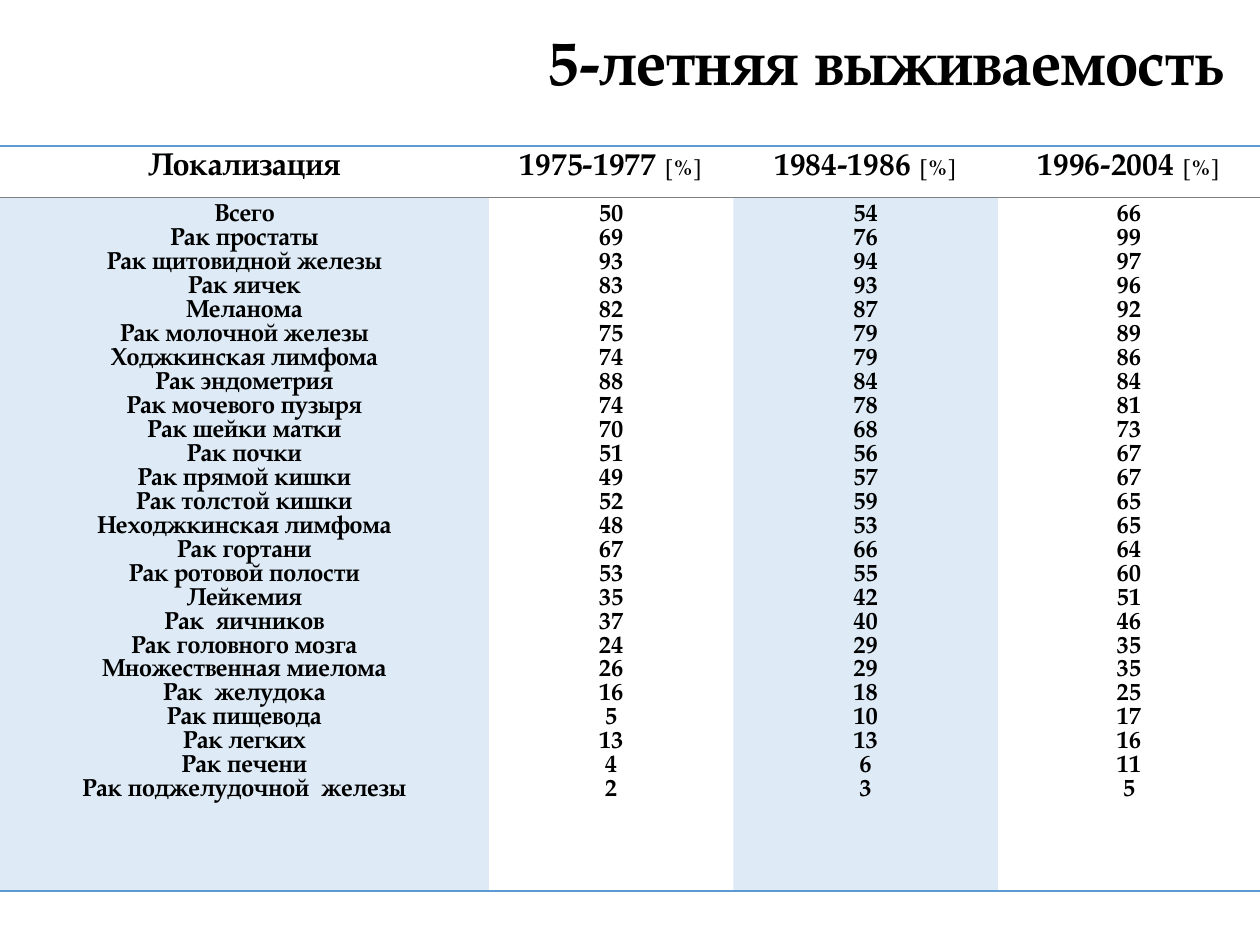
from typing import NamedTuple

import pptx
import pptx.util
import pptx.dml.color
import pptx.enum.text
import pptx.oxml.ns
from lxml import etree

FONT = "TeX Gyre Pagella"
BLUE = "5B9BD5"
GRAY = "7F7F7F"
WHITE = "FFFFFF"
Inches = pptx.util.Inches
Pt = pptx.util.Pt
qn = pptx.oxml.ns.qn
ALIGN = pptx.enum.text.PP_ALIGN
ANCHOR = pptx.enum.text.MSO_ANCHOR


class Column(NamedTuple):
    width: float
    header: str
    unit: str
    tinted: bool


class Survival(NamedTuple):
    site: str
    first: int
    second: int
    third: int


COLUMNS = [
    Column(3.88, "Локализация", "", True),
    Column(1.94, "1975-1977 ", "[%]", False),
    Column(2.1, "1984-1986 ", "[%]", True),
    Column(2.08, "1996-2004 ", "[%]", False),
]

ROWS = [
    Survival("Всего", 50, 54, 66),
    Survival("Рак простаты", 69, 76, 99),
    Survival("Рак щитовидной железы", 93, 94, 97),
    Survival("Рак яичек", 83, 93, 96),
    Survival("Меланома", 82, 87, 92),
    Survival("Рак молочной железы", 75, 79, 89),
    Survival("Ходжкинская лимфома", 74, 79, 86),
    Survival("Рак эндометрия", 88, 84, 84),
    Survival("Рак мочевого пузыря", 74, 78, 81),
    Survival("Рак шейки матки", 70, 68, 73),
    Survival("Рак почки", 51, 56, 67),
    Survival("Рак прямой кишки", 49, 57, 67),
    Survival("Рак толстой кишки", 52, 59, 65),
    Survival("Неходжкинская лимфома", 48, 53, 65),
    Survival("Рак гортани", 67, 66, 64),
    Survival("Рак ротовой полости", 53, 55, 60),
    Survival("Лейкемия", 35, 42, 51),
    Survival("Рак  яичников", 37, 40, 46),
    Survival("Рак головного мозга", 24, 29, 35),
    Survival("Множественная миелома", 26, 29, 35),
    Survival("Рак  желудока", 16, 18, 25),
    Survival("Рак пищевода", 5, 10, 17),
    Survival("Рак легких", 13, 13, 16),
    Survival("Рак печени", 4, 6, 11),
    Survival("Рак поджелудочной  железы", 2, 3, 5),
]


def color(value: str) -> pptx.dml.color.RGBColor:
    return pptx.dml.color.RGBColor.from_string(value)


def add_run(p, text: str, size: float) -> None:
    r = p.add_run()
    r.text = text
    r.font.name = FONT
    r.font.size = Pt(size)
    r.font.bold = True
    r.font.color.rgb = color("000000")


def set_border(cell, side: str, value: str, width: float) -> None:
    ln = etree.Element(qn(f"a:{side}"), w=str(Pt(width)))
    fill = etree.SubElement(ln, qn("a:solidFill"))
    etree.SubElement(fill, qn("a:srgbClr"), val=value)
    tc_pr = cell._tc.get_or_add_tcPr()
    position = len(tc_pr.findall(qn("a:lnT")))
    tc_pr.insert(position, ln)


def set_tint(cell) -> None:
    cell.fill.solid()
    cell.fill.fore_color.rgb = color(BLUE)
    clr = cell._tc.tcPr.find(qn("a:solidFill")).find(qn("a:srgbClr"))
    etree.SubElement(clr, qn("a:alpha"), val="20000")


def fill_header(cell, column: Column) -> None:
    p = cell.text_frame.paragraphs[0]
    p.alignment = ALIGN.CENTER
    add_run(p, column.header, 18)
    if column.unit:
        add_run(p, column.unit, 12)
    cell.fill.solid()
    cell.fill.fore_color.rgb = color(WHITE)
    set_border(cell, "lnT", BLUE, 1)
    set_border(cell, "lnB", GRAY, 0.5)


def fill_body(cell, values: list, tinted: bool) -> None:
    tf = cell.text_frame
    for i, value in enumerate(values):
        p = tf.add_paragraph() if i else tf.paragraphs[0]
        p.alignment = ALIGN.CENTER
        add_run(p, str(value), 14)
    if tinted:
        set_tint(cell)
    else:
        cell.fill.background()
    set_border(cell, "lnB", BLUE, 1)


def add_title(s) -> None:
    sp = s.shapes.title
    sp.left, sp.top = Inches(0.5), Inches(0.13)
    sp.width, sp.height = Inches(9.43), Inches(0.78)
    tf = sp.text_frame
    tf.word_wrap = True
    tf.vertical_anchor = ANCHOR.MIDDLE
    p = tf.paragraphs[0]
    p.alignment = ALIGN.RIGHT
    p.line_spacing = 0.9
    add_run(p, "5-летняя выживаемость ", 36)


def add_survival_table(s) -> None:
    frame = s.shapes.add_table(
        2, len(COLUMNS), 0, Inches(1.16), Inches(10), Inches(5.91)
    )
    table = frame.table
    table.horz_banding = False
    table.first_row = False
    style = table._tbl.tblPr.find(qn("a:tableStyleId"))
    style.text = "{2D5ABB26-0587-4C30-8999-92F81FD0307C}"
    table.rows[0].height = Inches(0.41)
    table.rows[1].height = Inches(5.5)
    for i, (column, values) in enumerate(zip(COLUMNS, zip(*ROWS))):
        table.columns[i].width = Inches(column.width)
        fill_header(table.cell(0, i), column)
        fill_body(table.cell(1, i), values, column.tinted)


def main() -> None:
    prs = pptx.Presentation()
    prs.slide_width, prs.slide_height = Inches(10), Inches(7.5)
    s = prs.slides.add_slide(prs.slide_layouts[5])
    add_title(s)
    add_survival_table(s)
    prs.save("out.pptx")


if __name__ == "__main__":
    main()
